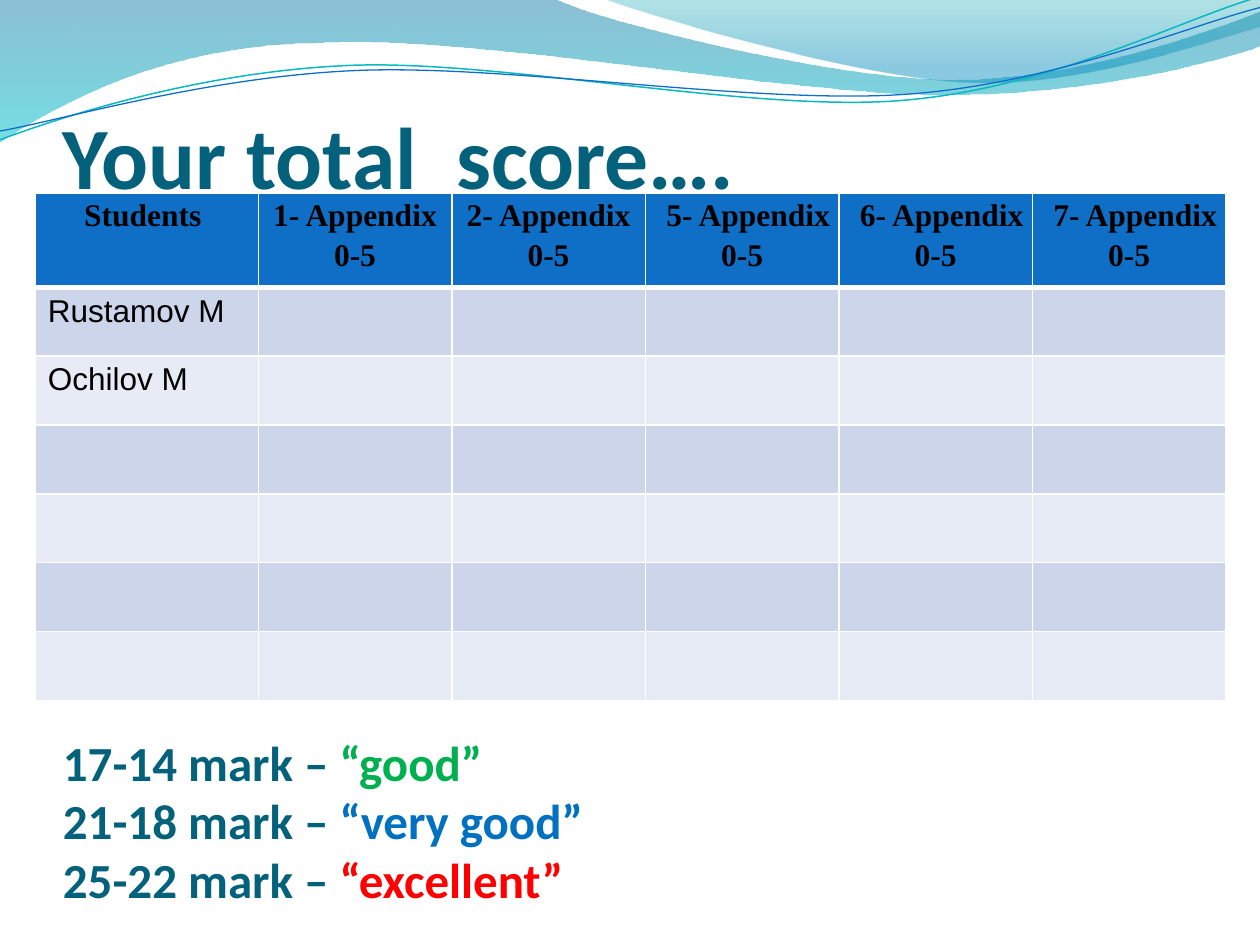
"""Build a score sheet slide with a wave header, a table and a mark scale."""
import lxml.etree
import pptx
import pptx.dml.color
import pptx.enum.text
import pptx.oxml
import pptx.oxml.ns
import pptx.util

Inches = pptx.util.Inches
Pt = pptx.util.Pt
RGB = pptx.dml.color.RGBColor
ALIGN = pptx.enum.text.PP_ALIGN
qn = pptx.oxml.ns.qn

BLACK = RGB(0x00, 0x00, 0x00)
HEADING = RGB(0x04, 0x61, 0x7B)
HEADER_FILL = RGB(0x0F, 0x6F, 0xC6)
BAND_FILLS = (RGB(0xCC, 0xD5, 0xEA), RGB(0xE7, 0xEB, 0xF5))
BORDER = RGB(0xFF, 0xFF, 0xFF)
GOOD = RGB(0x00, 0xB0, 0x50)
VERY_GOOD = RGB(0x00, 0x70, 0xC0)
EXCELLENT = RGB(0xFF, 0x00, 0x00)
TEAL_LINE = RGB(0x0A, 0xB8, 0xBF)
DEEP_BLUE = RGB(0x00, 0x74, 0xA1)
CYAN = RGB(0x00, 0xC6, 0xCF)
SEA_GREEN = RGB(0x00, 0xA1, 0xA9)
SKY_BLUE = RGB(0x00, 0x8B, 0xBF)

LEFT_WAVE = [
    (0, -0.01), (4.4, -0.01), (4.76, 0.17, 6.64, 0.63, 7.58, 0.63),
    (8.53, 0.63, 9.58, 0.26, 10, 0.09), (10.01, 0.36),
    (9.83, 0.44, 8.7, 0.76, 7.46, 0.75), (6.22, 0.75, 3.82, 0.28, 2.57, 0.34),
    (1.29, 0.35, 0.46, 0.83, -0.01, 1.13), (0, -0.01)]
RIGHT_WAVE = [
    (4.79, -0.01), (5.09, 0.11, 6.82, 0.62, 7.69, 0.65),
    (8.56, 0.69, 9.61, 0.32, 10, 0.21), (10, 0), (4.79, -0.01)]
TEAL_CURVE = [
    (0, 1.11), (0.48, 0.93, 1.58, 0.57, 2.77, 0.52),
    (3.95, 0.47, 5.93, 0.89, 7.13, 0.8), (8.33, 0.71, 9.38, 0.15, 9.98, -0.02)]
BLUE_CURVE = [
    (0, 1.04), (0.47, 0.96, 1.64, 0.61, 2.83, 0.56),
    (4.03, 0.51, 5.97, 0.83, 7.17, 0.75), (8.36, 0.67, 9.41, 0.21, 10, 0.06)]

TABLE_WIDTH, TABLE_HEIGHT = Inches(9.45), Inches(4.03)
NAME_WIDTH, HEADER_HEIGHT = Inches(1.77), Inches(0.75)
APPENDICES = (1, 2, 5, 6, 7)
STUDENTS = ("Rustamov M", "Ochilov M", "", "", "", "")
MARKS = (("17-14", "good", GOOD), ("21-18", "very good", VERY_GOOD),
         ("25-22", "excellent", EXCELLENT))


def add_outline(slide, segments, closed):
    """Add a freeform of straight sides and cubic Bezier curves."""
    anchors = [(Inches(segment[-2]), Inches(segment[-1])) for segment in segments]
    builder = slide.shapes.build_freeform(*anchors[0])
    builder.add_line_segments(anchors[1:], close=closed)
    outline = builder.convert_to_shape()
    outline.shadow.inherit = False
    sides = list(outline._element.iter(qn("a:lnTo")))
    for side, segment in zip(sides, segments[1:]):
        if len(segment) == 2:
            continue
        curve = lxml.etree.Element(qn("a:cubicBezTo"))
        for x, y in zip(segment[::2], segment[1::2]):
            lxml.etree.SubElement(curve, qn("a:pt"), x=str(Inches(x) - outline.left),
                                  y=str(Inches(y) - outline.top))
        side.getparent().replace(side, curve)
    return outline


def add_wave(slide, segments, stops):
    """Add a wave with a vertical gradient of (position, colour, opacity) stops."""
    wave = add_outline(slide, segments, closed=True)
    wave.line.fill.background()
    wave.fill.gradient()
    wave.fill.gradient_angle = 270
    for stop, (position, color, _) in zip(wave.fill.gradient_stops, stops):
        stop.position = position
        stop.color.rgb = color
    colors = wave._element.spPr.iter(qn("a:srgbClr"))
    for color_element, (_, _, opacity) in zip(colors, stops):
        lxml.etree.SubElement(color_element, qn("a:alpha"), val=str(opacity * 1000))


def add_curve(slide, segments, color, width):
    """Add a thin open curve."""
    curve = add_outline(slide, segments, closed=False)
    curve.fill.background()
    curve.line.color.rgb = color
    curve.line.width = Pt(width)


def add_run(paragraph, text, *, size, color, font="Calibri", bold=True):
    """Append formatted text to a paragraph."""
    run = paragraph.add_run()
    run.text = text
    run.font.name = font
    run.font.size = Pt(size)
    run.font.bold = bold
    run.font.color.rgb = color


def format_cell(cell, fill, bottom_width=1):
    """Fill a cell and give it white borders."""
    cell.fill.solid()
    cell.fill.fore_color.rgb = fill
    properties = cell._tc.get_or_add_tcPr()
    widths = {"lnL": 1, "lnR": 1, "lnT": 1, "lnB": bottom_width}
    for index, (side, width) in enumerate(widths.items()):
        border = lxml.etree.Element(qn(f"a:{side}"), w=str(Pt(width)))
        solid = lxml.etree.SubElement(border, qn("a:solidFill"))
        lxml.etree.SubElement(solid, qn("a:srgbClr"), val=str(BORDER))
        properties.insert(index, border)


def fill_header(cell, lines):
    """Write header lines given as (text, alignment) pairs."""
    format_cell(cell, HEADER_FILL, bottom_width=3)
    cell.margin_left = cell.margin_right = Inches(0.07)
    cell.margin_top = cell.margin_bottom = 0
    for index, (text, alignment) in enumerate(lines):
        frame = cell.text_frame
        paragraph = frame.add_paragraph() if index else frame.paragraphs[0]
        paragraph.alignment = alignment
        paragraph.line_spacing = 1.15
        add_run(paragraph, text, size=18, color=BLACK, font="Times New Roman")


def add_score_table(slide):
    """Add the table of students and appendix scores."""
    rows, columns = len(STUDENTS) + 1, len(APPENDICES) + 1
    scores = slide.shapes.add_table(
        rows, columns, Inches(0.28), Inches(1.53), TABLE_WIDTH, TABLE_HEIGHT).table
    score_width = (TABLE_WIDTH - NAME_WIDTH) // len(APPENDICES)
    student_height = (TABLE_HEIGHT - HEADER_HEIGHT) // len(STUDENTS)
    for index, column in enumerate(scores.columns):
        column.width = score_width if index else NAME_WIDTH
    for index, row in enumerate(scores.rows):
        row.height = student_height if index else HEADER_HEIGHT
    fill_header(scores.cell(0, 0), [("Students ", ALIGN.CENTER)])
    for column, number in enumerate(APPENDICES, 1):
        alignment = ALIGN.RIGHT if number >= 5 else ALIGN.CENTER
        fill_header(scores.cell(0, column),
                    [(f"{number}- Appendix", alignment), ("0-5", ALIGN.CENTER)])
    for row, student in enumerate(STUDENTS, 1):
        for column in range(columns):
            format_cell(scores.cell(row, column), BAND_FILLS[(row - 1) % 2])
        if student:
            add_run(scores.cell(row, 0).text_frame.paragraphs[0], student,
                    size=18, color=BLACK, font="Arial", bold=False)


def add_heading_and_marks(slide):
    """Add the heading and, below the table area, the mark scale."""
    frame = slide.shapes.add_textbox(
        Inches(0.5), Inches(0.77), Inches(9), Inches(6.44)).text_frame
    frame.word_wrap = True
    frame.margin_left = frame.margin_right = frame.margin_bottom = 0
    frame.margin_top = Inches(0.04)
    add_run(frame.paragraphs[0], "Your total  score….", size=50, color=HEADING)
    scale = frame.add_paragraph()
    scale.space_before = Pt(300)
    for index, (marks, grade, color) in enumerate(MARKS):
        if index:
            scale.add_line_break()
        add_run(scale, f"{marks} mark – ", size=28, color=HEADING)
        add_run(scale, f"“{grade}”", size=28, color=color)


def main():
    """Build and save the slide."""
    deck = pptx.Presentation()
    deck.slide_width, deck.slide_height = Inches(10), Inches(7.5)
    slide = deck.slides.add_slide(deck.slide_layouts[6])
    add_wave(slide, LEFT_WAVE, [(0, DEEP_BLUE, 45), (1, CYAN, 55)])
    add_wave(slide, RIGHT_WAVE, [(0, SEA_GREEN, 30), (0.8, SKY_BLUE, 45)])
    add_curve(slide, TEAL_CURVE, TEAL_LINE, 0.85)
    add_curve(slide, BLUE_CURVE, HEADER_FILL, 0.75)
    add_heading_and_marks(slide)
    add_score_table(slide)
    deck.save("out.pptx")


if __name__ == "__main__":
    main()
